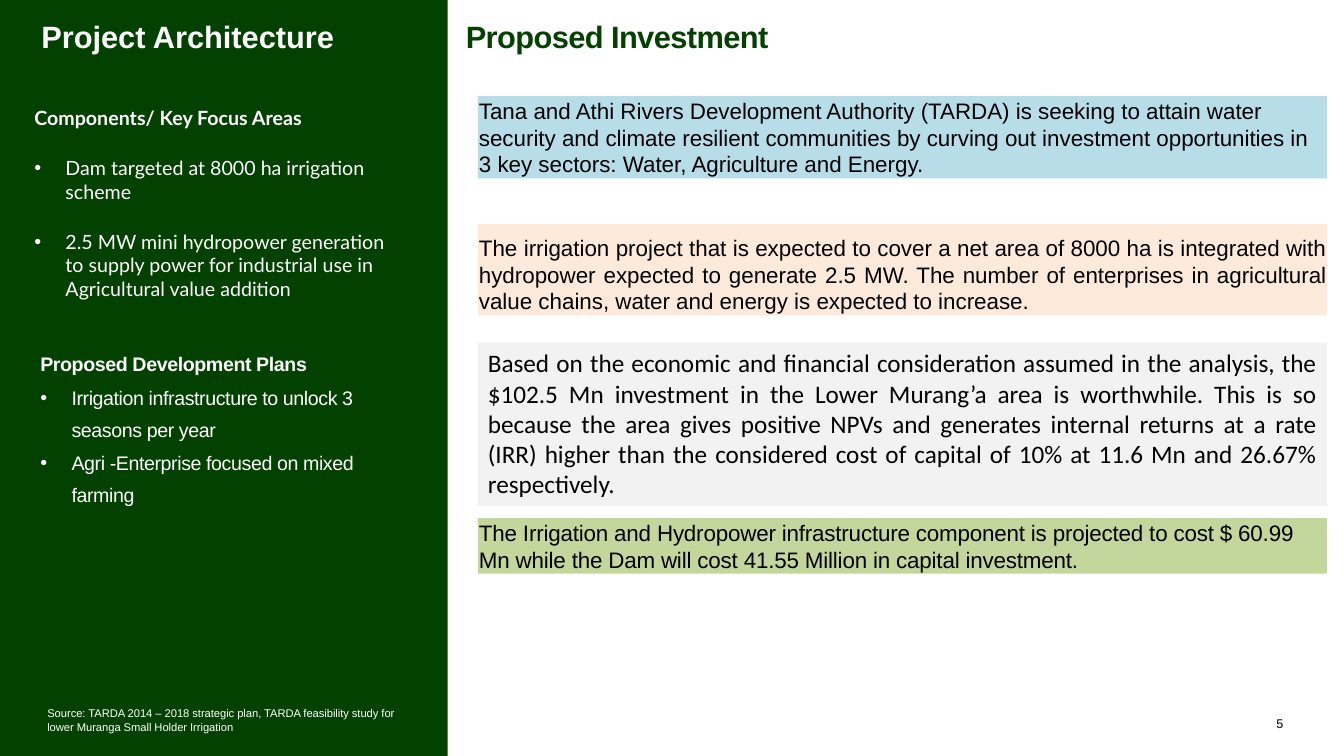
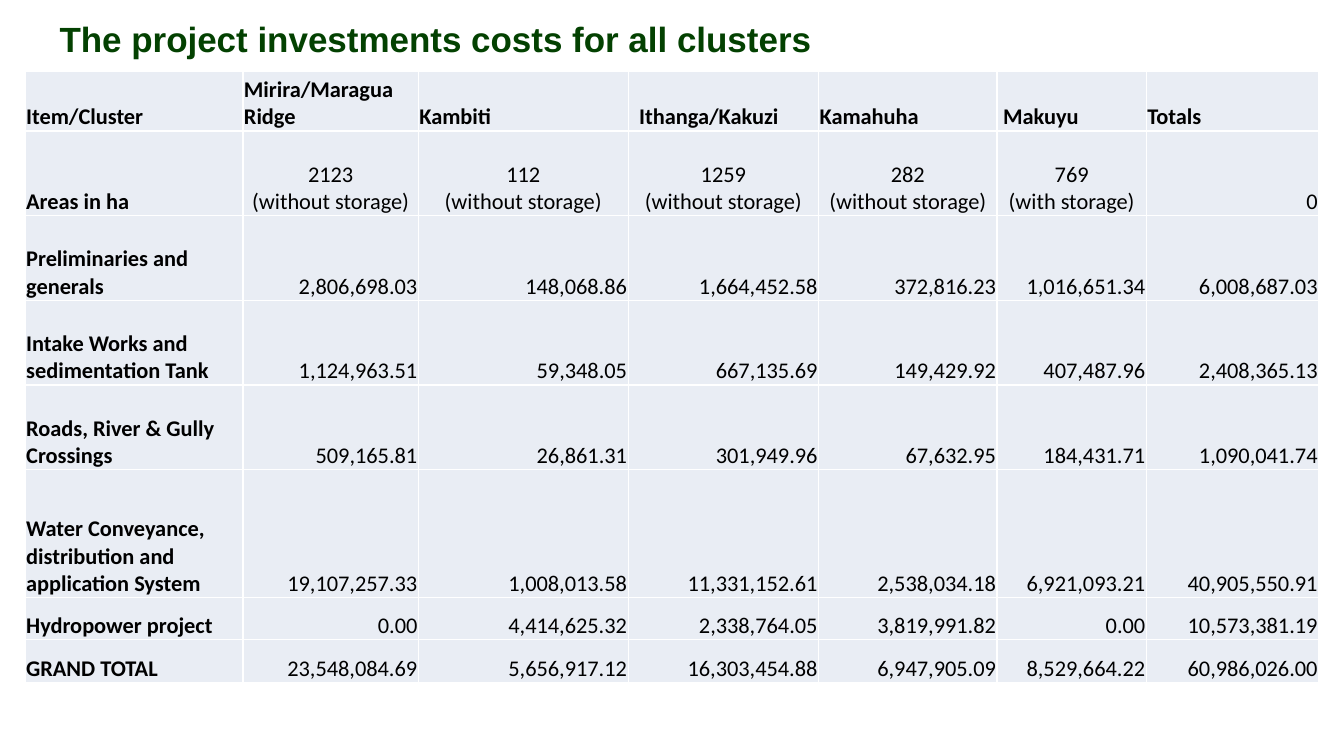
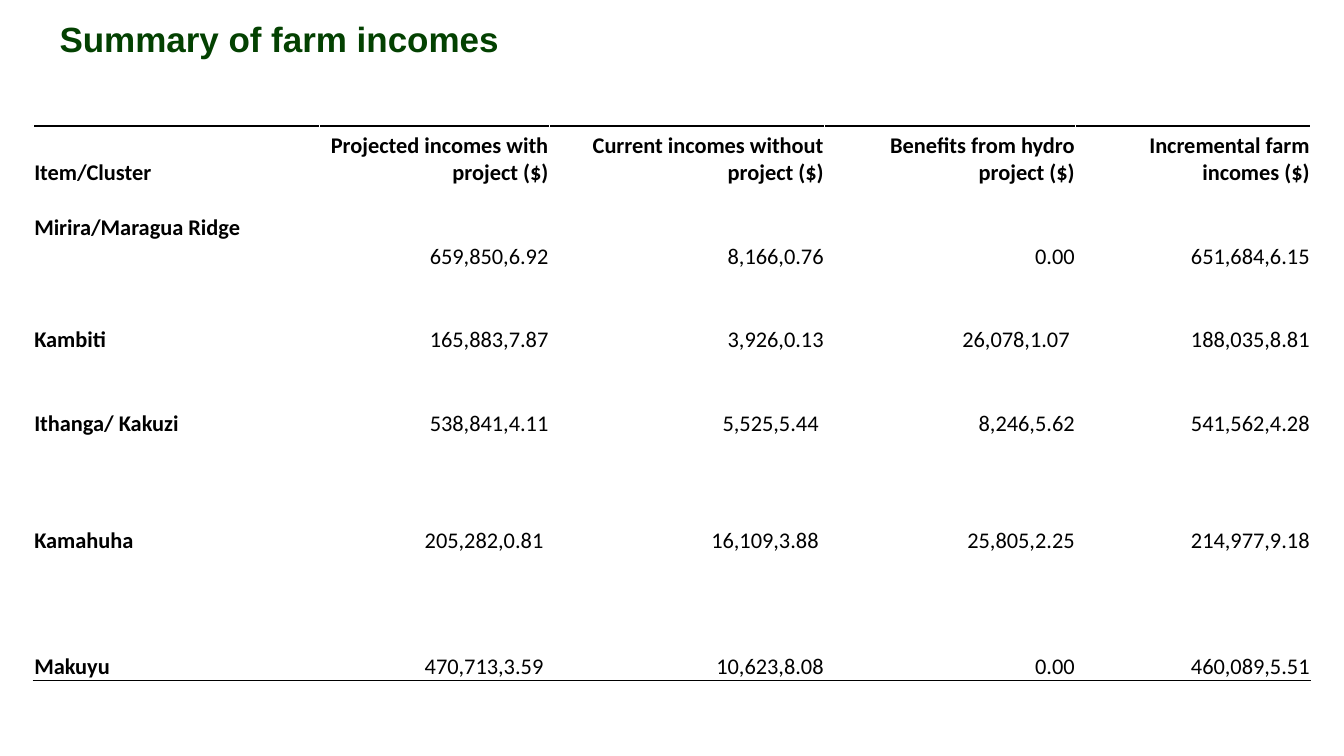
from lxml import etree
from pptx import Presentation
from pptx.dml.color import RGBColor
from pptx.enum.shapes import MSO_SHAPE
from pptx.enum.text import MSO_ANCHOR as Anchor, PP_ALIGN as Align
from pptx.oxml.ns import qn
from pptx.util import Pt

PX = 9144
BLACK = RGBColor(0x00, 0x00, 0x00)
WHITE = RGBColor(0xFF, 0xFF, 0xFF)
GREEN = RGBColor(0x03, 0x41, 0x01)
SKY = RGBColor(0xB7, 0xDE, 0xE8)
PEACH = RGBColor(0xFD, 0xEA, 0xDA)
GREY = RGBColor(0xF2, 0xF2, 0xF2)
OLIVE = RGBColor(0xC3, 0xD6, 0x9B)
PALE = RGBColor(0xE9, 0xED, 0xF4)

CARD_LEFT, CARD_WIDTH = 474, 842
BULLET_INDENT = 31
TIGHT = (1, 1, 0, 0)
WIDE = (10, 5, 10, 5)

COST_COLUMNS = [216, 174, 208, 189, 177, 148, 171]
COST_HEIGHTS = [59, 84, 84, 84, 84, 127, 42, 42]
COST_ROWS = [
    ["Item/Cluster", "Mirira/Maragua Ridge", "Kambiti", "Ithanga/Kakuzi", "Kamahuha", "Makuyu", "Totals"],
    ["Areas in ha", "2123\n(without storage)", "112\n(without storage)", "1259\n(without storage)",
     "282\n(without storage)", "769\n(with storage)", "0"],
    ["Preliminaries and generals", "2,806,698.03", "148,068.86", "1,664,452.58", "372,816.23",
     "1,016,651.34", "6,008,687.03"],
    ["Intake Works and sedimentation Tank", "1,124,963.51", "59,348.05", "667,135.69", "149,429.92",
     "407,487.96", "2,408,365.13"],
    ["Roads, River & Gully Crossings", "509,165.81", "26,861.31", "301,949.96", "67,632.95",
     "184,431.71", "1,090,041.74"],
    ["Water Conveyance, distribution and application System", "19,107,257.33", "1,008,013.58",
     "11,331,152.61", "2,538,034.18", "6,921,093.21", "40,905,550.91"],
    ["Hydropower project", "0.00", "4,414,625.32", "2,338,764.05", "3,819,991.82", "0.00", "10,573,381.19"],
    ["GRAND TOTAL", "23,548,084.69", "5,656,917.12", "16,303,454.88", "6,947,905.09", "8,529,664.22",
     "60,986,026.00"],
]
COST_INSETS = {(0, 3): (11, 1, 1, 0), (0, 5): (6, 1, 1, 0)}

INCOME_COLUMNS = [284, 228, 273, 249, 233]
INCOME_HEIGHTS = [60, 83, 83, 83, 116, 125]
INCOME_ROWS = [
    ["Item/Cluster", "Projected incomes with project ($)", "Current incomes without project ($)",
     "Benefits from hydro project ($)", "Incremental farm incomes ($)"],
    ["Mirira/Maragua Ridge", "659,850,6.92", "8,166,0.76", "0.00", "651,684,6.15"],
    ["Kambiti", "165,883,7.87", "3,926,0.13", "26,078,1.07", "188,035,8.81"],
    ["Ithanga/ Kakuzi", "538,841,4.11", "5,525,5.44", "8,246,5.62", "541,562,4.28"],
    ["Kamahuha", "205,282,0.81", "16,109,3.88", "25,805,2.25", "214,977,9.18"],
    ["Makuyu", "470,713,3.59", "10,623,8.08", "0.00", "460,089,5.51"],
]
NUDGED = (1, 1, 6, 0)
INCOME_INSETS = {(1, 0): (1, 1, 1, 28)}
INCOME_INSETS.update({place: NUDGED for place in [(2, 3), (3, 2), (4, 1), (4, 2), (5, 1)]})


def set_insets(target, insets):
    target.margin_left, target.margin_top, target.margin_right, target.margin_bottom = [
        inset * PX for inset in insets]


def style(para, font, size, color, bold=False, spacing=0, align=Align.LEFT):
    para.alignment = align
    for span in para.runs:
        span.font.name = font
        span.font.size = Pt(size)
        span.font.bold = bold
        span.font.color.rgb = color
        if spacing:
            span.font._element.set("spc", str(spacing))


def add_bullet(para):
    properties = para._p.get_or_add_pPr()
    properties.set("marL", str(BULLET_INDENT * PX))
    properties.set("indent", str(-BULLET_INDENT * PX))
    etree.SubElement(properties, qn("a:buFont")).set("typeface", "Arial")
    etree.SubElement(properties, qn("a:buChar")).set("char", "•")


def fill_frame(box, text, insets, **look):
    frame = box.text_frame
    frame.word_wrap = True
    frame.vertical_anchor = Anchor.TOP
    set_insets(frame, insets)
    frame.text = text
    style(frame.paragraphs[0], **look)


def add_text(page, place, text, **look):
    box = page.shapes.add_textbox(*[length * PX for length in place])
    fill_frame(box, text, TIGHT, **look)
    return box


def add_block(page, place, color):
    box = page.shapes.add_shape(MSO_SHAPE.RECTANGLE, *[length * PX for length in place])
    box.shadow.inherit = False
    box.fill.solid()
    box.fill.fore_color.rgb = color
    box.line.fill.background()
    return box


def add_card(page, top, height, color, text, insets=TIGHT, font="Arial", size=16, **look):
    box = add_block(page, (CARD_LEFT, top, CARD_WIDTH, height), color)
    fill_frame(box, text, insets, font=font, size=size, color=BLACK, **look)


def add_list(page, place, heading, items, font, gap, line_spacing, spacing=0):
    box = add_text(page, place, heading, font=font, size=14, color=WHITE, bold=True, spacing=spacing)
    frame = box.text_frame
    frame.paragraphs[0].line_spacing = line_spacing
    for item in items:
        para = frame.add_paragraph()
        para.text = item
        para.line_spacing = line_spacing
        para.space_before = Pt(gap)
        add_bullet(para)
        style(para, font, 14, WHITE, spacing=spacing)


def add_page(deck, title, place=(59, 17, 1215, 42), size=25, color=GREEN, insets=(0, 0, 0, 0)):
    page = deck.slides.add_slide(deck.slide_layouts[5])
    heading = page.shapes.title
    heading.left, heading.top, heading.width, heading.height = [length * PX for length in place]
    fill_frame(heading, title, insets, font="Arial", size=size, color=color, bold=True)
    return page


def add_border(cell, side, color):
    properties = cell._tc.get_or_add_tcPr()
    line = etree.Element(qn("a:ln" + side), w=str(Pt(1)))
    fill = etree.SubElement(line, qn("a:solidFill"))
    etree.SubElement(fill, qn("a:srgbClr")).set("val", str(color))
    position = len(properties.findall("*")) - 1
    properties.insert(position, line)


def cell_align(text, row, column, header_align):
    if column == 0:
        return Align.LEFT
    if row == 0:
        return header_align
    return Align.CENTER if "\n" in text else Align.RIGHT


def add_grid(page, left, top, columns, heights, rows, special_insets, header_align, fill=None):
    table = page.shapes.add_table(len(rows), len(columns), left * PX, top * PX,
                                  sum(columns) * PX, sum(heights) * PX).table
    table.first_row = table.horz_banding = False
    for column, width in zip(table.columns, columns):
        column.width = width * PX
    for row, height in zip(table.rows, heights):
        row.height = height * PX
    for r, texts in enumerate(rows):
        for c, text in enumerate(texts):
            cell = table.cell(r, c)
            cell.vertical_anchor = Anchor.BOTTOM
            set_insets(cell, special_insets.get((r, c), (1, 1, 1, 0)))
            cell.text_frame.text = text
            for para in cell.text_frame.paragraphs:
                style(para, "Calibri", 16, BLACK, bold=r == 0 or c == 0,
                      align=cell_align(text, r, c, header_align))
            if fill is None:
                cell.fill.background()
            else:
                cell.fill.solid()
                cell.fill.fore_color.rgb = fill
    return table


def build_investment(deck):
    page = add_page(deck, "Project Architecture", (40, 17, 364, 38), 22, WHITE, TIGHT)
    add_text(page, (1265, 709, 20, 18), "5", font="Arial", size=9, color=BLACK, spacing=-10)
    add_block(page, (0, 0, 444, 750), GREEN)
    heading = page.shapes.title.element
    heading.getparent().append(heading)
    add_text(page, (461, 17, 792, 38), "Proposed Investment",
             font="Arial", size=22, color=GREEN, bold=True, spacing=-40)
    add_list(page, (33, 104, 369, 196), "Components/ Key Focus Areas", [
        "Dam targeted at 8000 ha irrigation scheme",
        "2.5 MW mini hydropower generation to supply power for industrial use in Agricultural value addition",
    ], "Lato", 19, 1.0)
    add_list(page, (39, 340, 356, 194), "Proposed Development Plans", [
        "Irrigation infrastructure to unlock 3 seasons per year",
        "Agri -Enterprise focused on mixed farming",
    ], "Arial", 1, 1.36, spacing=-30)
    add_text(page, (46, 700, 356, 28),
             "Source: TARDA 2014 – 2018 strategic plan, TARDA feasibility study for "
             "lower Muranga Small Holder Irrigation",
             font="Arial", size=8, color=WHITE, spacing=-5)
    add_card(page, 95, 82, SKY,
             "Tana and Athi Rivers Development Authority (TARDA) is seeking to attain water security and "
             "climate resilient communities by curving out investment opportunities in 3 key sectors: "
             "Water, Agriculture and Energy.")
    add_card(page, 222, 91, PEACH,
             "The irrigation project that is expected to cover a net area of 8000 ha is integrated with "
             "hydropower expected to generate 2.5 MW. The number of enterprises in agricultural value "
             "chains, water and energy is expected to increase.",
             insets=(1, 10, 0, 0), align=Align.JUSTIFY)
    add_card(page, 340, 162, GREY,
             "Based on the economic and financial consideration assumed in the analysis, the $102.5 Mn "
             "investment in the Lower Murang’a area is worthwhile. This is so because the area gives "
             "positive NPVs and generates internal returns at a rate (IRR) higher than the considered "
             "cost of capital of 10% at 11.6 Mn and 26.67% respectively.",
             insets=WIDE, font="Calibri", size=18, align=Align.JUSTIFY)
    add_card(page, 514, 55, OLIVE,
             "The Irrigation and Hydropower infrastructure component is projected to cost $ 60.99 Mn "
             "while the Dam will cost 41.55 Million in capital investment.", spacing=-10)


def build_costs(deck):
    page = add_page(deck, "The project investments costs for all clusters")
    table = add_grid(page, 25, 71, COST_COLUMNS, COST_HEIGHTS, COST_ROWS, COST_INSETS, Align.LEFT, PALE)
    for cell in table.iter_cells():
        for side in "LRTB":
            add_border(cell, side, WHITE)


def build_incomes(deck):
    page = add_page(deck, "Summary of farm incomes")
    table = add_grid(page, 33, 125, INCOME_COLUMNS, INCOME_HEIGHTS, INCOME_ROWS, INCOME_INSETS, Align.RIGHT)
    for column in range(len(INCOME_COLUMNS)):
        add_border(table.cell(0, column), "T", BLACK)
        add_border(table.cell(len(INCOME_ROWS) - 1, column), "B", BLACK)


def main():
    deck = Presentation()
    deck.slide_width, deck.slide_height = 1333 * PX, 750 * PX
    build_investment(deck)
    build_costs(deck)
    build_incomes(deck)
    deck.save("out.pptx")


if __name__ == "__main__":
    main()
